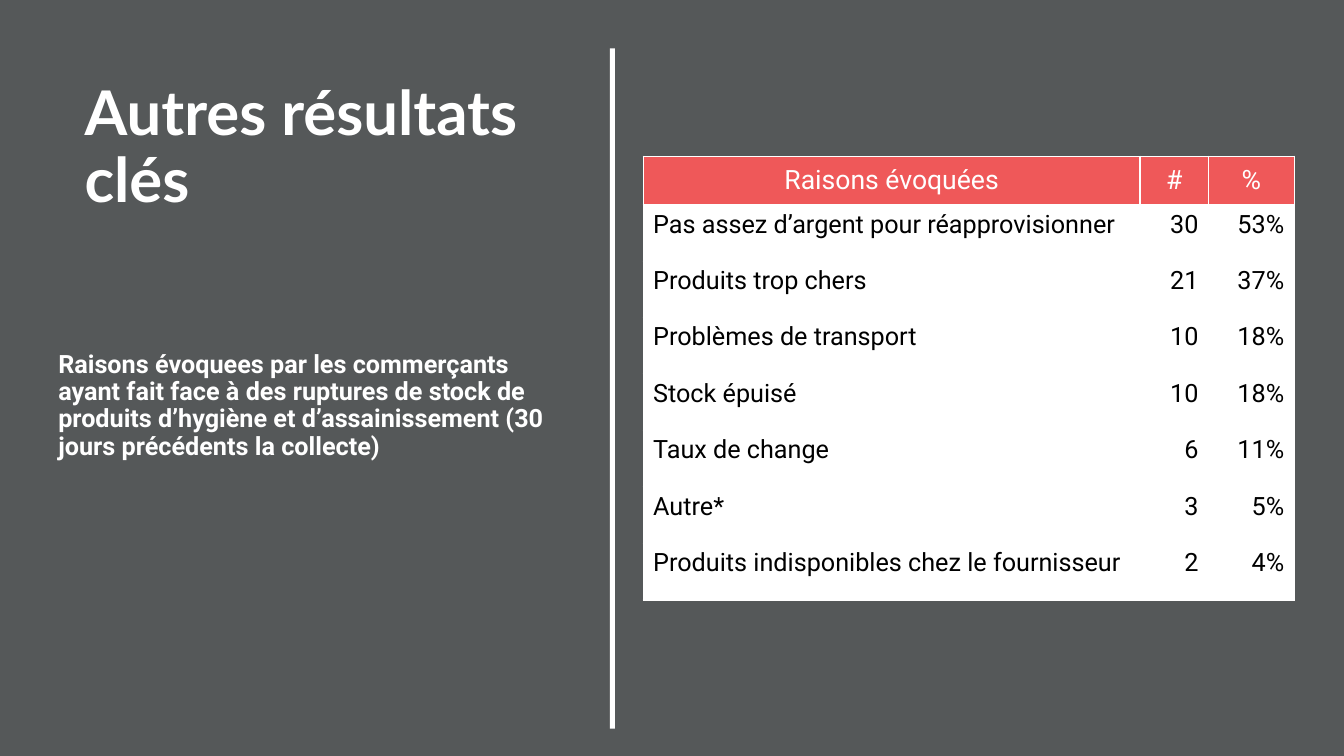
"""Build the slide on reasons for hygiene product stock-outs."""
import lxml.etree
import pptx
import pptx.dml.color
import pptx.enum.shapes
import pptx.enum.text
import pptx.oxml.ns
import pptx.util

COLORS = {"slate": "555859", "coral": "EF5859", "white": "FFFFFF", "black": "000000"}
WIDTH, HEIGHT = pptx.util.Inches(13.33), pptx.util.Inches(7.5)
ALIGN = pptx.enum.text.PP_ALIGN
COLUMN_SHARES = (36.98, 5.1, 6.38)
HEADER_SHARE, ROW_SHARE = 6.4, 7.47
HEADER = ("Raisons évoquées", "#", "%")
REASONS = (
    ("Pas assez d’argent pour réapprovisionner", "30", "53%"),
    ("Produits trop chers", "21", "37%"),
    ("Problèmes de transport", "10", "18%"),
    ("Stock épuisé", "10", "18%"),
    ("Taux de change", "6", "11%"),
    ("Autre*", "3", "5%"),
    ("Produits indisponibles chez le fournisseur", "2", "4%"),
)


def across(share):
    return int(WIDTH * share / 100)


def down(share):
    return int(HEIGHT * share / 100)


def area(left, top, width, height):
    return across(left), down(top), across(width), down(height)


def paint(fill, color):
    fill.solid()
    fill.fore_color.rgb = pptx.dml.color.RGBColor.from_string(COLORS[color])


def set_font(p, name, size, color, bold=False):
    p.font.name = name
    p.font.size = pptx.util.Pt(size)
    p.font.bold = bold
    p.font.color.rgb = pptx.dml.color.RGBColor.from_string(COLORS[color])


def add_bar(s, place, color):
    sp = s.shapes.add_shape(pptx.enum.shapes.MSO_SHAPE.RECTANGLE, *area(*place))
    sp.shadow.inherit = False
    paint(sp.fill, color)
    sp.line.fill.background()


def add_text(s, place, text, font, size):
    tf = s.shapes.add_textbox(*area(*place)).text_frame
    tf.word_wrap = True
    p = tf.paragraphs[0]
    p.text = text
    p.line_spacing = 0.9
    set_font(p, font, size, "white", bold=True)


def add_borders(cell, color):
    tc_pr = cell._tc.get_or_add_tcPr()
    for side in "LRTB":
        ln = lxml.etree.SubElement(tc_pr, pptx.oxml.ns.qn(f"a:ln{side}"), w="12700")
        fill = lxml.etree.SubElement(ln, pptx.oxml.ns.qn("a:solidFill"))
        lxml.etree.SubElement(fill, pptx.oxml.ns.qn("a:srgbClr"), val=COLORS[color])


def fill_cell(cell, text, fill, color, size, align):
    add_borders(cell, "white")
    paint(cell.fill, fill)
    p = cell.text_frame.paragraphs[0]
    p.text = text
    p.alignment = align
    set_font(p, "Roboto", size, color)


def fill_header(cell, text):
    fill_cell(cell, text, "coral", "white", 19, ALIGN.CENTER)
    cell.vertical_anchor = pptx.enum.text.MSO_ANCHOR.MIDDLE
    cell.margin_left = cell.margin_right = pptx.util.Inches(0.08)
    cell.margin_top = cell.margin_bottom = pptx.util.Inches(0.04)


def add_reasons_table(s, left, top):
    height = HEADER_SHARE + ROW_SHARE * len(REASONS)
    place = area(left, top, sum(COLUMN_SHARES), height)
    table = s.shapes.add_table(len(REASONS) + 1, len(HEADER), *place).table
    for column, share in zip(table.columns, COLUMN_SHARES):
        column.width = across(share)
    for i, row in enumerate(table.rows):
        row.height = down(ROW_SHARE if i else HEADER_SHARE)
    for j, text in enumerate(HEADER):
        fill_header(table.cell(0, j), text)
    for i, reason in enumerate(REASONS, 1):
        for j, text in enumerate(reason):
            align = ALIGN.RIGHT if j else ALIGN.LEFT
            fill_cell(table.cell(i, j), text, "white", "black", 18, align)


def main():
    prs = pptx.Presentation()
    prs.slide_width, prs.slide_height = WIDTH, HEIGHT
    s = prs.slides.add_slide(prs.slide_layouts[6])
    paint(s.background.fill, "slate")
    add_bar(s, (45.38, 6.4, 0.38, 90), "white")
    add_text(s, (5.55, 10.27, 37.2, 8.53), "Autres résultats clés", "Lato", 44)
    add_text(
        s, (3.6, 45.87, 39.15, 12.8),
        "Raisons évoquees par les commerçants ayant fait face à des ruptures de stock "
        "de produits d’hygiène et d’assainissement (30 jours précédents la collecte)",
        "Roboto", 18,
    )
    add_reasons_table(s, 47.85, 20.67)
    prs.save("out.pptx")


if __name__ == "__main__":
    main()
